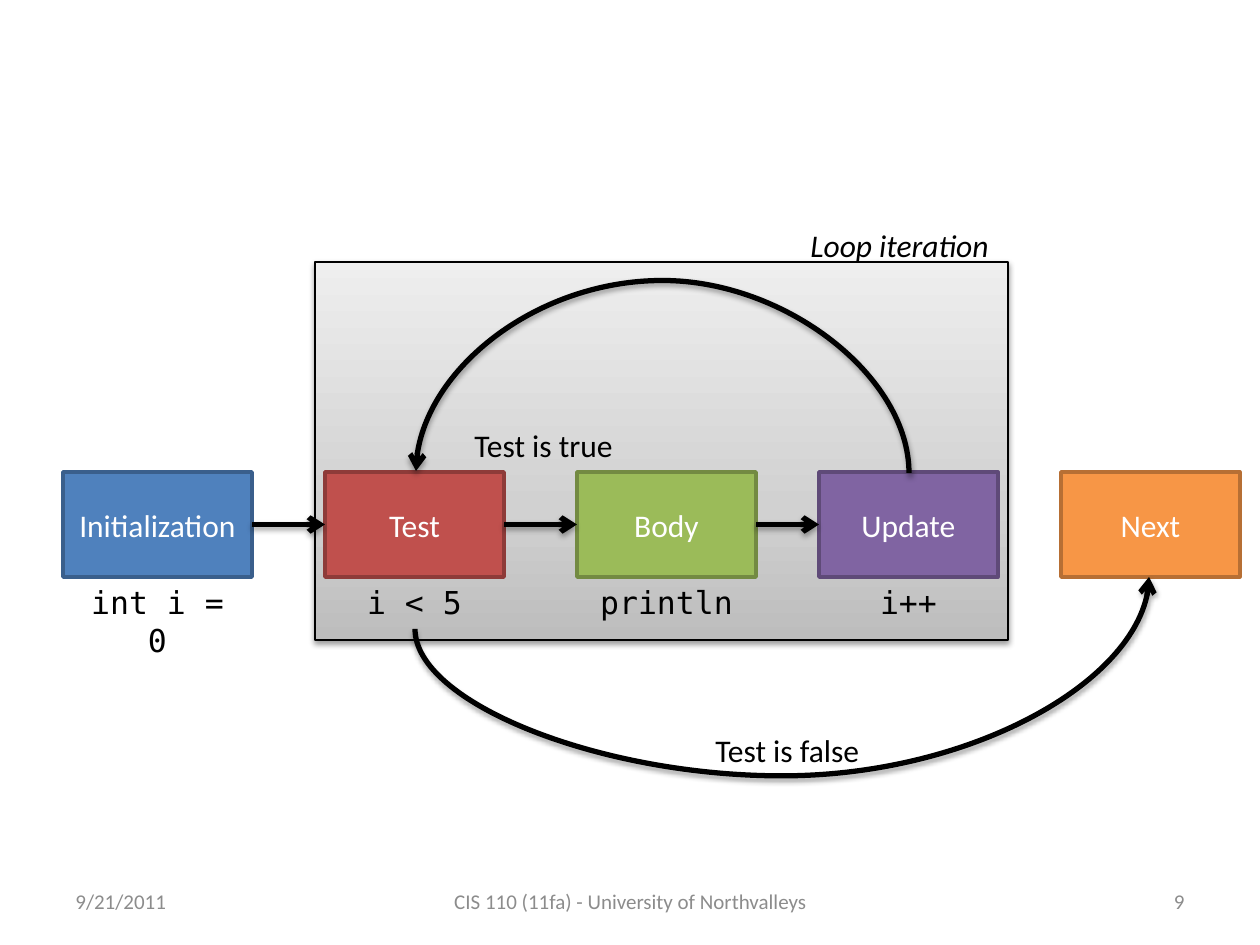
import copy
from dataclasses import dataclass

import lxml.etree
import pptx
import pptx.dml.color
import pptx.enum.shapes
import pptx.enum.text
import pptx.oxml.ns
import pptx.util

PX = 914400 / 126
RGB = pptx.dml.color.RGBColor.from_string
SHAPE = pptx.enum.shapes.MSO_SHAPE
CONNECTOR = pptx.enum.shapes.MSO_CONNECTOR
ALIGN = pptx.enum.text.PP_ALIGN
ANCHOR = pptx.enum.text.MSO_ANCHOR
qn = pptx.oxml.ns.qn


@dataclass(frozen=True)
class Theme:
    sans: str = "Calibri"
    mono: str = "DejaVu Sans Mono"
    body_size: int = 18
    footer_size: int = 12
    ink: str = "000000"
    paper: str = "FFFFFF"
    muted: str = "8C8C8C"
    blue: tuple = ("4F81BD", "3A5F8C")
    red: tuple = ("C0504D", "8E3B39")
    green: tuple = ("9BBB59", "738A42")
    purple: tuple = ("8064A2", "5F4A78")
    orange: tuple = ("F79646", "B76F34")
    panel: tuple = ((0, "BDBDBD"), (0.35, "D1D1D1"), (1, "EEEEEE"))


theme = Theme()


def px(*lengths):
    return [pptx.util.Emu(round(n * PX)) for n in lengths]


def write(shape, text, color=theme.ink, size=theme.body_size, font=theme.sans,
          align=ALIGN.LEFT, anchor=ANCHOR.TOP, italic=False):
    frame = shape.text_frame
    frame.word_wrap = True
    frame.vertical_anchor = anchor
    frame.text = text
    frame.paragraphs[0].alignment = align
    style = frame.paragraphs[0].runs[0].font
    style.name = font
    style.size = pptx.util.Pt(size)
    style.italic = italic
    style.color.rgb = RGB(color)


deck = pptx.Presentation()
deck.slide_width, deck.slide_height = px(1260, 945)
slide = deck.slides.add_slide(deck.slide_layouts[6])
shapes = slide.shapes

# Panel around the repeated steps
panel = shapes.add_shape(SHAPE.RECTANGLE, *px(315, 262, 693, 378))
panel.fill.gradient()
panel.fill.gradient_angle = 90
first_stop = panel._element.spPr.find(".//" + qn("a:gs"))
first_stop.addnext(copy.deepcopy(first_stop))
for stop, (position, color) in zip(panel.fill.gradient_stops, theme.panel):
    stop.position = position
    stop.color.rgb = RGB(color)
panel.line.color.rgb = RGB(theme.ink)
panel.line.width = pptx.util.Pt(0.75)

# Steps with the code each one runs
STEP_TOP, STEP_HEIGHT = 472, 105
step_specs = [
    ("Initialization", "int i = 0", 63, 189, theme.blue, SHAPE.FLOWCHART_PROCESS),
    ("Test", "i < 5", 325, 179, theme.red, SHAPE.FLOWCHART_PROCESS),
    ("Body", "println", 577, 179, theme.green, SHAPE.FLOWCHART_PROCESS),
    ("Update", "i++", 819, 179, theme.purple, SHAPE.FLOWCHART_PROCESS),
    ("Next", None, 1061, 179, theme.orange, SHAPE.RECTANGLE),
]
steps = []
for label, code, left, width, (fill, outline), outline_shape in step_specs:
    step = shapes.add_shape(outline_shape, *px(left, STEP_TOP, width, STEP_HEIGHT))
    step.shadow.inherit = False
    step.fill.solid()
    step.fill.fore_color.rgb = RGB(fill)
    step.line.color.rgb = RGB(outline)
    step.line.width = pptx.util.Pt(2)
    write(step, label, theme.paper, align=ALIGN.CENTER, anchor=ANCHOR.MIDDLE)
    steps.append(step)
    if code:
        caption = shapes.add_textbox(*px(left, STEP_TOP + STEP_HEIGHT, width, 50))
        write(caption, code, font=theme.mono, align=ALIGN.CENTER)

# Straight arrows from Initialization through Update
arrows = []
for source, target in zip(steps[:3], steps[1:4]):
    arrow = shapes.add_connector(CONNECTOR.STRAIGHT, 0, 0, 0, 0)
    arrow.begin_connect(source, 3)
    arrow.end_connect(target, 1)
    arrows.append(arrow)

# Curved arrows: a sideways connector, turned so that it leaves vertically
for (x1, y1), (x2, y2), bend_y, turn in [
    ((909, 473), (416, 471), 279, 270),
    ((415, 629), (1149, 577), 776, 90),
]:
    mid_x, mid_y = (x1 + x2) / 2, (y1 + y2) / 2
    half_rise, half_span = (y1 - y2) / 2, (x2 - x1) / 2
    arrow = shapes.add_connector(CONNECTOR.CURVE, *px(
        mid_x + half_rise * (1 if turn == 90 else -1), mid_y + abs(half_span),
        mid_x - half_rise * (1 if turn == 90 else -1), mid_y - abs(half_span)))
    properties = arrow._element.spPr
    properties.find(qn("a:xfrm")).set("rot", str(turn * 60000))
    bend = round((y1 - bend_y) / (y1 - y2) * 100000)
    lxml.etree.SubElement(properties.find(".//" + qn("a:avLst")), qn("a:gd"),
                          name="adj1", fmla=f"val {bend}")
    arrows.append(arrow)

for arrow in arrows:
    arrow.line.color.rgb = RGB(theme.ink)
    arrow.line.width = pptx.util.Pt(3)
    lxml.etree.SubElement(arrow.line._get_or_add_ln(), qn("a:tailEnd"), type="arrow")

# Soft shadow below the panel and the arrows
for item, opacity in [(panel, 38000)] + [(arrow, 35000) for arrow in arrows]:
    effects = lxml.etree.SubElement(item._element.spPr, qn("a:effectLst"))
    shadow = lxml.etree.SubElement(effects, qn("a:outerShdw"), blurRad="40000",
                                   dist="22000", dir="5400000", rotWithShape="0")
    tint = lxml.etree.SubElement(shadow, qn("a:srgbClr"), val=theme.ink)
    lxml.etree.SubElement(tint, qn("a:alpha"), val=str(opacity))

for text, left, top, width, italic in [
    ("Test is true", 462, 420, 168, False),
    ("Test is false", 703, 725, 179, False),
    ("Loop iteration", 798, 220, 210, True),
]:
    write(shapes.add_textbox(*px(left, top, width, 50)), text, italic=italic)

for text, left, width, align in [
    ("9/21/2011", 63, 294, ALIGN.LEFT),
    ("CIS 110 (11fa) - University of Northvalleys", 431, 399, ALIGN.CENTER),
    ("9", 903, 294, ALIGN.RIGHT),
]:
    write(shapes.add_textbox(*px(left, 876, width, 50)), text, theme.muted,
          theme.footer_size, align=align, anchor=ANCHOR.MIDDLE)

deck.save("out.pptx")
